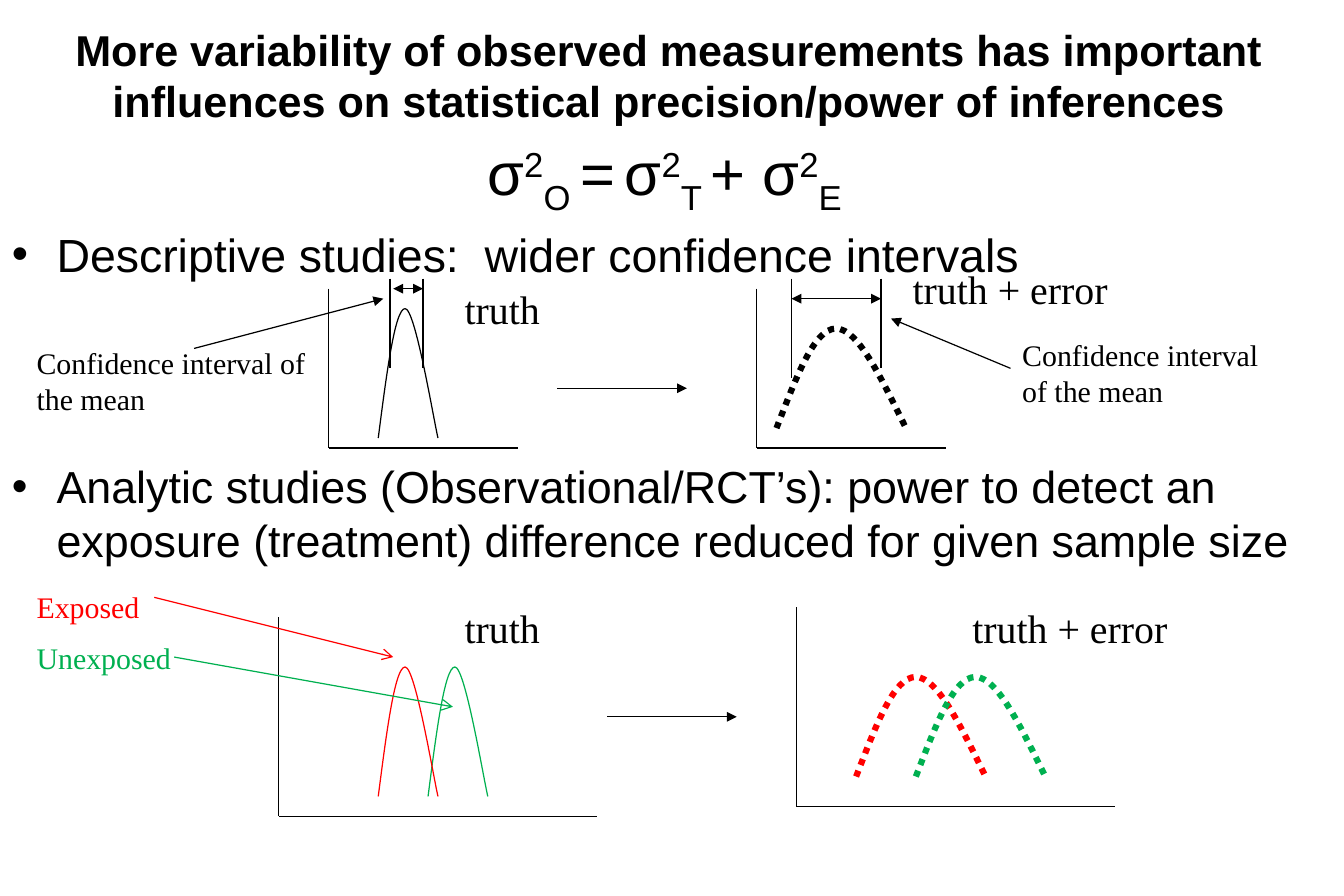
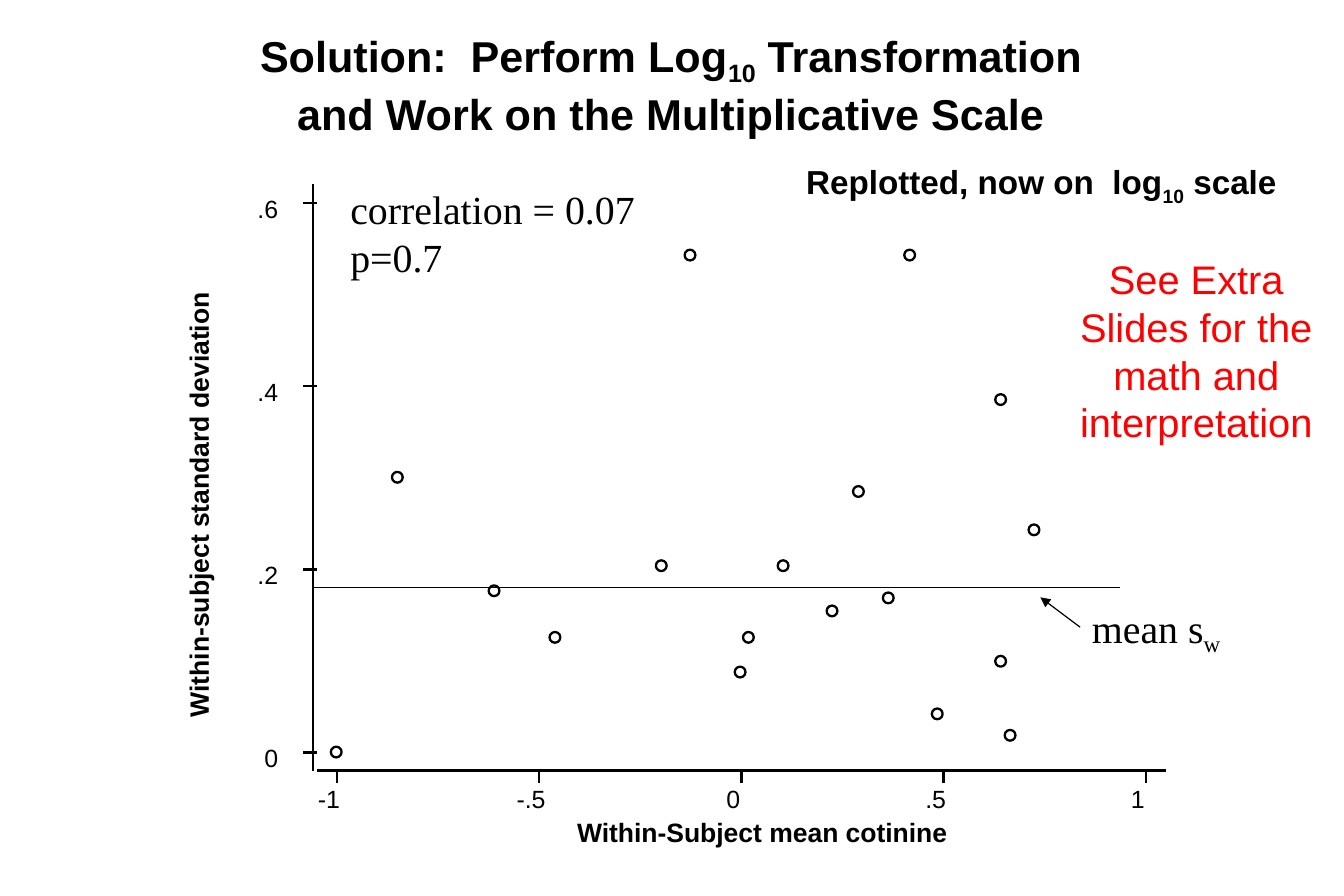
"""Build two slides on measurement error and on a log-scale replot."""
from dataclasses import dataclass

import lxml.etree
import pptx
import pptx.dml.color
import pptx.enum.dml
import pptx.enum.shapes
import pptx.enum.text
import pptx.oxml.ns
import pptx.util

Pt = pptx.util.Pt
RGBColor = pptx.dml.color.RGBColor
Align = pptx.enum.text.PP_ALIGN
qn = pptx.oxml.ns.qn

BLACK = RGBColor(0x00, 0x00, 0x00)
RED = RGBColor(0xFF, 0x00, 0x00)
GREEN = RGBColor(0x00, 0xB0, 0x50)
SANS = "Arial"
SERIF = "Times New Roman"
THIN = 0.75
AXIS_WEIGHT = 1.38
SUP, SUB = 30000, -25000

NARROW_BELL = [(0, 1), (0.14, 0.5), (0.28, 0), (0.45, 0), (0.62, 0), (0.92, 0.84), (1, 1)]
WIDE_BELL = [(0, 1), (0.15, 0.5), (0.29, 0), (0.46, 0), (0.63, 0), (0.81, 0.5), (1, 1)]


@dataclass(frozen=True)
class Run:
    """A piece of text, raised or lowered by its baseline."""
    text: str
    baseline: int = 0


@dataclass(frozen=True)
class Label:
    """A text box with one paragraph."""
    left: float
    top: float
    width: float
    runs: tuple[Run, ...]
    size: float = 24
    font: str = SERIF
    color: RGBColor = BLACK
    bold: bool = False
    align: Align = Align.LEFT
    bullet: bool = False
    inset: bool = True
    rotation: float = 0


@dataclass(frozen=True)
class Line:
    """A straight line with optional arrowheads."""
    x1: float
    y1: float
    x2: float
    y2: float
    color: RGBColor = BLACK
    head: str = ""
    tail: str = ""
    weight: float = THIN


@dataclass(frozen=True)
class Axes:
    """An upright and a level axis that meet at the lower left."""
    left: float
    top: float
    right: float
    bottom: float


@dataclass(frozen=True)
class Bell:
    """A distribution curve, dotted when it includes error."""
    left: float
    top: float
    color: RGBColor = BLACK
    with_error: bool = False


EQUATION = (
    Run("σ"), Run("2", SUP), Run("O ", SUB), Run("="), Run(" ", SUB), Run("σ"), Run("2", SUP),
    Run("T ", SUB), Run("+ σ"), Run("2", SUP), Run("E", SUB),
)
TRUTH = (Run("truth"),)
TRUTH_ERROR = (Run("truth + error"),)
INTERVAL = (Run("Confidence interval of the mean"),)

VARIABILITY_LABELS = [
    Label(0, 78.4, 801, EQUATION, 36, SANS, align=Align.CENTER),
    Label(0, 132.5, 810, (Run("Descriptive studies:  wider confidence intervals"),),
          28, SANS, bullet=True),
    Label(0, 272.8, 810, (Run("Analytic studies (Observational/RCT’s): power to detect an "
                              "exposure (treatment) difference reduced for given sample size"),),
          27, SANS, bullet=True),
    Label(273, 168, 138, TRUTH),
    Label(543, 156, 210, TRUTH_ERROR),
    Label(273, 360, 138, TRUTH),
    Label(579, 360, 210, TRUTH_ERROR),
    Label(15, 204, 180, INTERVAL, 18),
    Label(609, 199.5, 174, INTERVAL, 18),
    Label(15, 351.5, 180, (Run("Exposed"),), 18, color=RED),
    Label(15, 382, 180, (Run("Unexposed"),), 18, color=GREEN),
]
VARIABILITY_AXES = [
    Axes(198, 174, 312, 270),
    Axes(456, 174, 570, 270),
    Axes(168, 372, 360, 492),
    Axes(480, 366, 672, 486),
]
VARIABILITY_BELLS = [
    Bell(228, 186),
    Bell(468, 198, with_error=True),
    Bell(258, 402, GREEN),
    Bell(228, 402, RED),
    Bell(516, 408, RED, True),
    Bell(552, 408, GREEN, True),
]
VARIABILITY_LINES = [
    Line(336, 234, 414, 234, tail="triangle"),
    Line(366, 432, 444, 432, tail="triangle"),
    Line(235, 168, 235, 222),
    Line(255, 168, 255, 222),
    Line(237, 174, 255, 174, head="triangle", tail="triangle"),
    Line(117, 210, 231, 180, tail="triangle"),
    Line(477, 168, 477, 228),
    Line(531, 168, 531, 222),
    Line(477, 180, 531, 180, head="triangle", tail="triangle"),
    Line(609, 222, 537, 192, tail="triangle"),
    Line(93, 360, 237, 396, RED, tail="arrow"),
    Line(105, 396, 273, 426, GREEN, tail="arrow"),
]

COTININE_LABELS = [
    Label(-18.7, 284.4, 276.5, (Run("Within-subject standard deviation"),),
          16, SANS, bold=True, inset=False, rotation=270),
    Label(347.8, 491.8, 226, (Run("Within-Subject mean cotinine"),),
          16, SANS, bold=True, inset=False),
    Label(204, 108, 192, (Run("correlation = 0.07 p=0.7"),)),
    Label(651, 360, 126, (Run("mean s"), Run("w", SUB))),
    Label(459.6, 93.8, 336, (Run("Replotted, now on  log"), Run("10", SUB), Run(" scale")),
          20, SANS, bold=True, align=Align.CENTER),
    Label(641, 150, 160, (Run("See Extra Slides for the math and interpretation"),),
          24, SANS, RED, align=Align.CENTER),
]
COTININE_LINES = [
    Line(702.7, 464.4, 190.8, 464.4, weight=AXIS_WEIGHT),
    Line(188.6, 464.4, 188.6, 110.9, weight=AXIS_WEIGHT),
    Line(188.6, 354, 675, 354),
    Line(651, 378, 627, 360, tail="triangle"),
]
X_TICKS = ["-1", "-.5", "0", ".5", "1"]
X_FIRST, X_STEP = 203, 121.9
Y_TICKS = ["0", ".2", ".4", ".6"]
Y_FIRST, Y_STEP = 453.6, -110.4
MARKER_SIZE = 6.5
MARKERS = [
    (199.4, 450), (236.2, 284.4), (294.5, 352.8), (331.2, 380.9), (412.6, 150.5),
    (395.3, 337.7), (468.7, 337.7), (442.8, 401.8), (447.8, 380.9), (532.1, 357.1),
    (498.2, 365), (514.1, 293), (599.8, 237.6), (561.6, 427), (605.5, 439.9),
    (545, 150.5), (599.8, 395.3), (619.9, 316.1),
]


def add_runs(p, runs: tuple[Run, ...], size: float, font: str, color: RGBColor, bold: bool) -> None:
    """Append formatted runs to a paragraph."""
    for run in runs:
        r = p.add_run()
        r.text = run.text
        r.font.size, r.font.name, r.font.bold = Pt(size), font, bold
        r.font.color.rgb = color
        if run.baseline:
            r._r.get_or_add_rPr().set("baseline", str(run.baseline))


def add_titled_slide(prs, box: tuple[float, ...], lines: list[tuple[Run, ...]]):
    """Add a title-only slide and fill its title."""
    s = prs.slides.add_slide(prs.slide_layouts[5])
    title = s.shapes.title
    title.left, title.top, title.width, title.height = map(Pt, box)
    tf = title.text_frame
    tf.auto_size = pptx.enum.text.MSO_AUTO_SIZE.NONE
    tf.vertical_anchor = pptx.enum.text.MSO_ANCHOR.MIDDLE
    p = tf.paragraphs[0]
    p.alignment = Align.CENTER
    for i, runs in enumerate(lines):
        if i:
            p.add_line_break()
        add_runs(p, runs, 26, SANS, BLACK, True)
    return s


def add_label(s, label: Label) -> None:
    """Draw a text box."""
    height = label.size * 1.2 + (7.2 if label.inset else 0)
    sp = s.shapes.add_textbox(Pt(label.left), Pt(label.top), Pt(label.width), Pt(height))
    sp.rotation = label.rotation
    tf = sp.text_frame
    tf.word_wrap = True
    if not label.inset:
        tf.margin_left = tf.margin_top = tf.margin_right = tf.margin_bottom = 0
    p = tf.paragraphs[0]
    p.alignment = label.align
    if label.bullet:
        pPr = p._p.get_or_add_pPr()
        pPr.set("marL", str(Pt(27)))
        pPr.set("indent", str(Pt(-27)))
        lxml.etree.SubElement(pPr, qn("a:buFont")).set("typeface", SANS)
        lxml.etree.SubElement(pPr, qn("a:buChar")).set("char", "•")
    add_runs(p, label.runs, label.size, label.font, label.color, label.bold)


def add_line(s, line: Line) -> None:
    """Draw a straight connector."""
    sp = s.shapes.add_connector(pptx.enum.shapes.MSO_CONNECTOR.STRAIGHT,
                                Pt(line.x1), Pt(line.y1), Pt(line.x2), Pt(line.y2))
    sp.line.color.rgb = line.color
    sp.line.width = Pt(line.weight)
    for tag, kind in (("a:headEnd", line.head), ("a:tailEnd", line.tail)):
        if kind:
            lxml.etree.SubElement(sp.get_or_add_ln(), qn(tag)).set("type", kind)
    lxml.etree.SubElement(sp.element.spPr, qn("a:effectLst"))


def add_axes(s, axes: Axes) -> None:
    """Draw a pair of axes."""
    add_line(s, Line(axes.left, axes.top, axes.left, axes.bottom))
    add_line(s, Line(axes.left, axes.bottom, axes.right, axes.bottom))


def style_outline(sp, color: RGBColor, weight: float) -> None:
    """Leave a shape unfilled, with a plain outline."""
    sp.shadow.inherit = False
    sp.fill.background()
    sp.line.color.rgb = color
    sp.line.width = Pt(weight)


def curve_segments(sp) -> None:
    """Turn each three straight segments of a freeform into one cubic curve."""
    segments = sp.element.xpath(".//a:lnTo")
    for i in range(0, len(segments), 3):
        curve = lxml.etree.Element(qn("a:cubicBezTo"))
        segments[i].addprevious(curve)
        for segment in segments[i:i + 3]:
            curve.append(segment[0])
            segment.getparent().remove(segment)


def add_bell(s, bell: Bell) -> None:
    """Draw a distribution curve."""
    outline, width, height = (WIDE_BELL, 78, 60) if bell.with_error else (NARROW_BELL, 36, 78)
    points = [(Pt(bell.left + width * x), Pt(bell.top + height * y)) for x, y in outline]
    builder = s.shapes.build_freeform(*points[0])
    builder.add_line_segments(points[1:], close=False)
    sp = builder.convert_to_shape()
    curve_segments(sp)
    style_outline(sp, bell.color, 3.75 if bell.with_error else THIN)
    if bell.with_error:
        sp.line.dash_style = pptx.enum.dml.MSO_LINE.ROUND_DOT


def add_ticks(s) -> None:
    """Draw the tick marks and tick labels of the scatter."""
    for i, text in enumerate(X_TICKS):
        x = X_FIRST + i * X_STEP
        add_line(s, Line(x, 471.6, x, 464.4, weight=AXIS_WEIGHT))
        add_label(s, Label(x - 19.8, 472.3, 30, (Run(text),), 15, SANS,
                           align=Align.CENTER, inset=False))
    for i, text in enumerate(Y_TICKS):
        y = Y_FIRST + i * Y_STEP
        add_line(s, Line(190.8, y, 182.9, y, weight=AXIS_WEIGHT))
        add_label(s, Label(143.6, y - 5.8, 24, (Run(text),), 15, SANS,
                           align=Align.RIGHT, inset=False))


def add_marker(s, corner: tuple[float, float]) -> None:
    """Draw one ring marker of the scatter."""
    sp = s.shapes.add_shape(pptx.enum.shapes.MSO_SHAPE.OVAL, *map(Pt, corner),
                            Pt(MARKER_SIZE), Pt(MARKER_SIZE))
    style_outline(sp, BLACK, AXIS_WEIGHT)


def main() -> None:
    """Build and save the presentation."""
    prs = pptx.Presentation()
    prs.slide_width, prs.slide_height = Pt(810), Pt(540)

    variability = add_titled_slide(prs, (21, 24, 765, 42), [(Run(
        "More variability of observed measurements has important "
        "influences on statistical precision/power of inferences"),)])
    cotinine = add_titled_slide(prs, (1, 29.8, 807, 42), [
        (Run("Solution:  Perform Log"), Run("10", SUB), Run(" Transformation")),
        (Run("and Work on the Multiplicative Scale"),)])
    add_ticks(cotinine)
    for s, draw, items in (
        (variability, add_axes, VARIABILITY_AXES),
        (variability, add_bell, VARIABILITY_BELLS),
        (variability, add_label, VARIABILITY_LABELS),
        (variability, add_line, VARIABILITY_LINES),
        (cotinine, add_marker, MARKERS),
        (cotinine, add_label, COTININE_LABELS),
        (cotinine, add_line, COTININE_LINES),
    ):
        for item in items:
            draw(s, item)

    prs.save("out.pptx")


if __name__ == "__main__":
    main()
